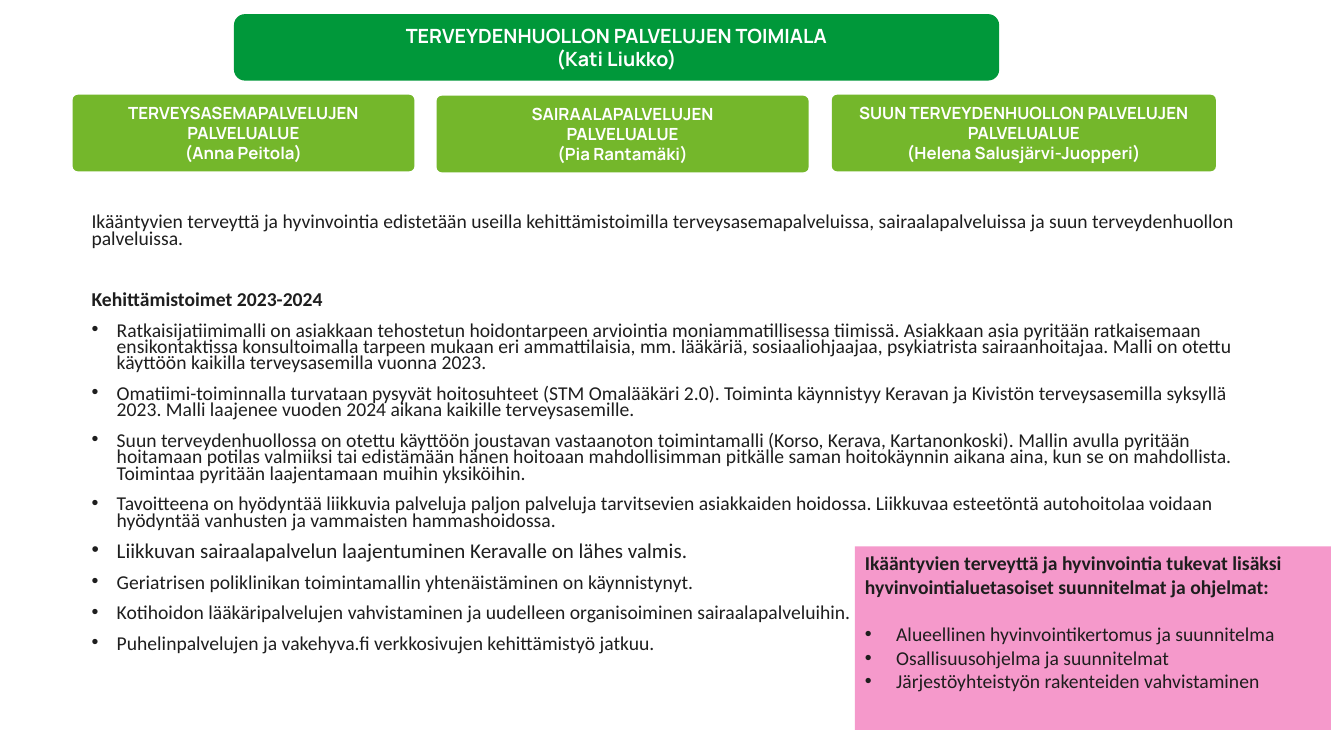
from dataclasses import dataclass

from lxml.etree import SubElement
from pptx import Presentation
from pptx.dml.color import RGBColor
from pptx.enum.shapes import MSO_SHAPE as Shape
from pptx.enum.text import MSO_ANCHOR as Anchor, PP_ALIGN as Align
from pptx.oxml.ns import qn
from pptx.util import Pt

PX = 9144  # EMU per px, 100 px to the inch


@dataclass(frozen=True)
class Theme:
    dark_green: str = "00983A"
    light_green: str = "74B72B"
    pink: str = "F599CB"
    ink: str = "1E1E1E"
    white: str = "FFFFFF"
    heading_font: str = "Manrope"
    body_font: str = "Calibri"
    title_size: int = 14
    area_size: int = 12
    body_size: int = 14
    large_size: int = 15


THEME = Theme()

INTRO = ("Ikääntyvien terveyttä ja hyvinvointia edistetään useilla kehittämistoimilla "
         "terveysasemapalveluissa, sairaalapalveluissa ja suun terveydenhuollon palveluissa.")
ACTIONS_HEADING = "Kehittämistoimet 2023-2024"
MOBILE_HOSPITAL = "Liikkuvan sairaalapalvelun laajentuminen Keravalle on lähes valmis."
ACTIONS = [
    "Ratkaisijatiimimalli on asiakkaan tehostetun hoidontarpeen arviointia moniammatillisessa "
    "tiimissä. Asiakkaan asia pyritään ratkaisemaan ensikontaktissa konsultoimalla tarpeen mukaan "
    "eri ammattilaisia, mm. lääkäriä, sosiaaliohjaajaa, psykiatrista sairaanhoitajaa. Malli on "
    "otettu käyttöön kaikilla terveysasemilla vuonna 2023.",
    "Omatiimi-toiminnalla turvataan pysyvät hoitosuhteet (STM Omalääkäri 2.0). Toiminta käynnistyy "
    "Keravan ja Kivistön terveysasemilla syksyllä 2023. Malli laajenee vuoden 2024 aikana kaikille "
    "terveysasemille.",
    "Suun terveydenhuollossa on otettu käyttöön joustavan vastaanoton toimintamalli (Korso, Kerava, "
    "Kartanonkoski). Mallin avulla pyritään hoitamaan potilas valmiiksi tai edistämään hänen "
    "hoitoaan mahdollisimman pitkälle saman hoitokäynnin aikana aina, kun se on "
    "mahdollista. Toimintaa pyritään laajentamaan muihin yksiköihin.",
    "Tavoitteena on hyödyntää liikkuvia palveluja paljon palveluja tarvitsevien asiakkaiden "
    "hoidossa. Liikkuvaa esteetöntä autohoitolaa voidaan hyödyntää vanhusten ja vammaisten "
    "hammashoidossa.",
    MOBILE_HOSPITAL,
    "Geriatrisen poliklinikan toimintamallin yhtenäistäminen on käynnistynyt.",
    "Kotihoidon lääkäripalvelujen vahvistaminen ja uudelleen organisoiminen sairaalapalveluihin.",
    "Puhelinpalvelujen ja vakehyva.fi verkkosivujen kehittämistyö jatkuu.",
]
PLANS_HEADING = ("Ikääntyvien terveyttä ja hyvinvointia tukevat lisäksi hyvinvointialuetasoiset "
                 "suunnitelmat ja ohjelmat:")
PLANS = [
    "Alueellinen hyvinvointikertomus ja suunnitelma",
    "Osallisuusohjelma ja suunnitelmat",
    "Järjestöyhteistyön rakenteiden vahvistaminen",
]
SERVICE_AREAS = [
    ((72, 94, 339, 76), ["TERVEYSASEMAPALVELUJEN PALVELUALUE", "(Anna Peitola)"]),
    ((433, 95, 369, 76), ["SAIRAALAPALVELUJEN", "PALVELUALUE", "(Pia Rantamäki)"]),
    ((825, 94, 381, 76), ["SUUN TERVEYDENHUOLLON PALVELUJEN PALVELUALUE",
                          "(Helena Salusjärvi-Juopperi)"]),
]


def emu(box):
    return [length * PX for length in box]


def add_paragraph(frame, text, size, font, color, bold=False, indent=0, before=0,
                  spacing=None, align=Align.LEFT):
    """Append a paragraph; indent in px gives it a hanging bullet."""
    first = frame.paragraphs[0]
    paragraph = frame.add_paragraph() if first.runs else first
    paragraph.add_run().text = text
    paragraph.alignment = align
    paragraph.space_before = Pt(before)
    if spacing:
        paragraph.line_spacing = spacing
    if indent:
        properties = paragraph._p.get_or_add_pPr()
        properties.set("marL", str(indent * PX))
        properties.set("indent", str(-indent * PX))
        SubElement(properties, qn("a:buFont")).set("typeface", "Arial")
        SubElement(properties, qn("a:buChar")).set("char", "•")
    paragraph.font.size = Pt(size)
    paragraph.font.name = font
    paragraph.font.bold = bold
    paragraph.font.color.rgb = RGBColor.from_string(color)


def add_panel(slide, box, kind, fill):
    panel = slide.shapes.add_shape(kind, *emu(box))
    panel.shadow.inherit = False
    panel.fill.solid()
    panel.fill.fore_color.rgb = RGBColor.from_string(fill)
    panel.line.fill.background()
    panel.text_frame.word_wrap = True
    return panel


def add_unit(slide, box, lines, fill, size, rounding=None):
    """One rounded box of the organisation chart."""
    unit = add_panel(slide, box, Shape.ROUNDED_RECTANGLE, fill)
    if rounding:
        unit.adjustments[0] = rounding
    unit.text_frame.vertical_anchor = Anchor.MIDDLE
    for line in lines:
        add_paragraph(unit.text_frame, line, size, THEME.heading_font, THEME.white,
                      bold=True, align=Align.CENTER)


def add_actions(slide, box):
    """Introduction and the list of development actions."""
    frame = slide.shapes.add_textbox(*emu(box)).text_frame
    frame.word_wrap = True
    font, ink, size = THEME.body_font, THEME.ink, THEME.body_size
    add_paragraph(frame, INTRO, size, font, ink, spacing=0.7)
    add_paragraph(frame, ACTIONS_HEADING, size, font, ink, bold=True, before=32, spacing=0.7)
    for action in ACTIONS:
        action_size = THEME.large_size if action == MOBILE_HOSPITAL else size
        add_paragraph(frame, action, action_size, font, ink, indent=25, before=10, spacing=0.7)


def add_plans(slide, box):
    """Pink panel of supporting plans and programmes."""
    frame = add_panel(slide, box, Shape.RECTANGLE, THEME.pink).text_frame
    frame.vertical_anchor = Anchor.TOP
    style = (THEME.body_size, THEME.body_font, THEME.ink)
    add_paragraph(frame, PLANS_HEADING, *style, bold=True)
    for index, plan in enumerate(PLANS):
        add_paragraph(frame, plan, *style, indent=31, before=0 if index else 17)


def main():
    deck = Presentation()
    deck.slide_width, deck.slide_height = emu((1333, 750))
    slide = deck.slides.add_slide(deck.slide_layouts[6])

    add_actions(slide, (81, 209, 1164, 473))

    # Organisation chart: division, then its service areas
    add_unit(slide, (232, 14, 759, 66),
             ["TERVEYDENHUOLLON PALVELUJEN TOIMIALA", "(Kati Liukko)"],
             THEME.dark_green, THEME.title_size)
    for box, lines in SERVICE_AREAS:
        add_unit(slide, box, lines, THEME.light_green, THEME.area_size, rounding=0.07)

    add_plans(slide, (848, 542, 472, 182))
    deck.save("out.pptx")


if __name__ == "__main__":
    main()
